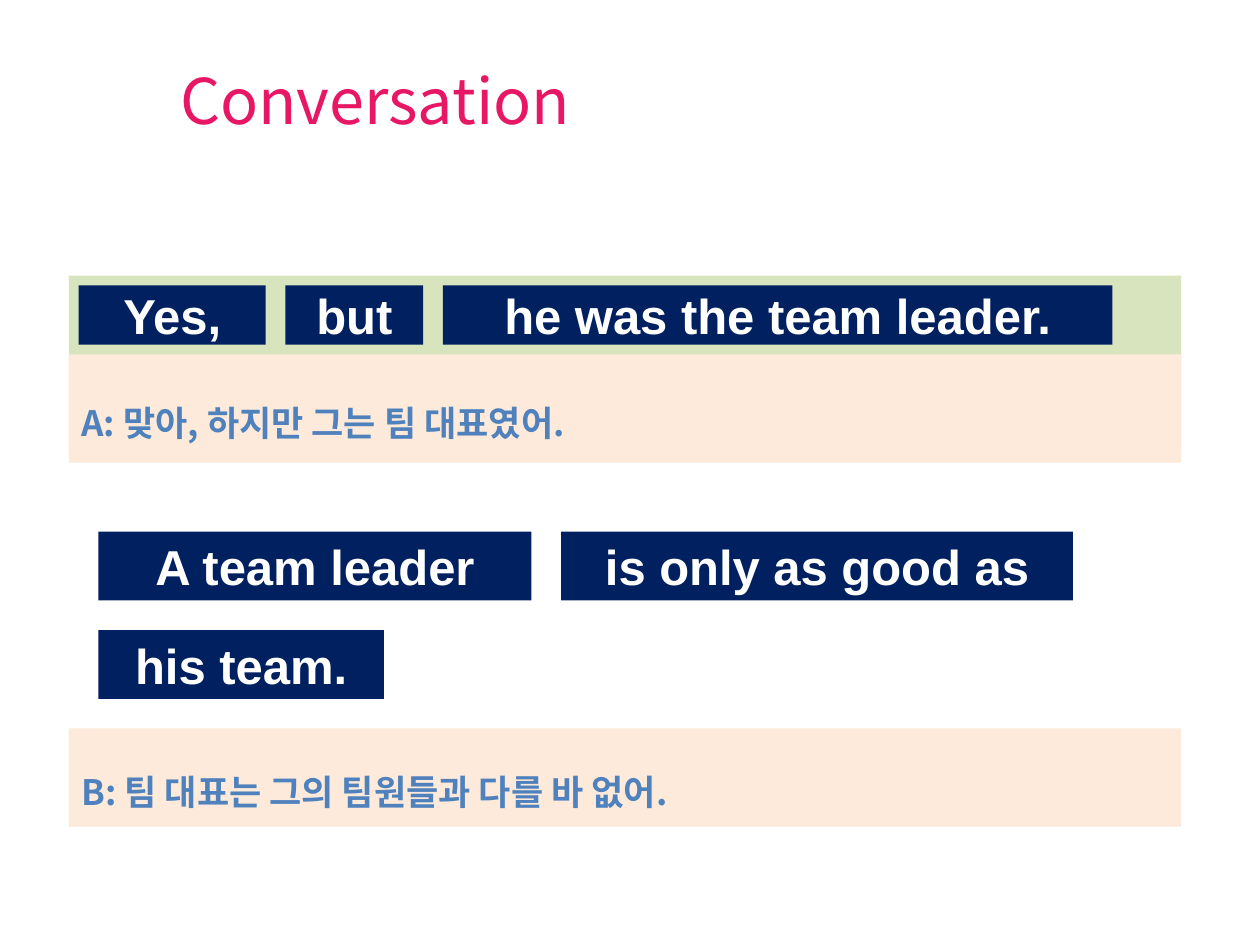
from pptx import Presentation
from pptx import util as u
from pptx.dml.color import RGBColor
from pptx.enum import shapes, text
from pptx.oxml.ns import qn
from lxml import etree

PINK = RGBColor(0xE8, 0x17, 0x66)
NAVY = RGBColor(0x00, 0x20, 0x60)
GREEN = RGBColor(0xD7, 0xE4, 0xBD)
PEACH = RGBColor(0xFD, 0xEA, 0xDA)
BLUE = RGBColor(0x4F, 0x81, 0xBD)
WHITE = RGBColor(0xFF, 0xFF, 0xFF)
LATIN = "Arial"
KOREAN = "Noto Sans CJK KR"
WIDE, HIGH = u.Inches(10), u.Inches(7.5)
COLS, ROWS = 128, 96
EDGE, SPAN = 7, 113


def grid(col, row, cols, rows):
    across, down = WIDE / COLS, HIGH / ROWS
    return [round(n) for n in (col * across, row * down, cols * across, rows * down)]


def write(para, words, size, font, ink, bold=True):
    run = para.add_run()
    run.text = words
    run.font.size = u.Pt(size)
    run.font.name = font
    run.font.bold = bold
    run.font.color.rgb = ink
    east = etree.Element(qn("a:ea"), typeface=font)
    run.font._element.find(qn("a:latin")).addnext(east)


def block(slide, place, fill):
    shape = slide.shapes.add_shape(shapes.MSO_SHAPE.RECTANGLE, *grid(*place))
    shape.shadow.inherit = False
    shape.fill.solid()
    shape.fill.fore_color.rgb = fill
    shape.line.fill.background()
    shape.text_frame.vertical_anchor = text.MSO_ANCHOR.MIDDLE
    return shape


def title(slide, words):
    box = slide.shapes.add_textbox(*grid(15.6, 5.6, 89.7, 12))
    box.text_frame.word_wrap = False
    write(box.text_frame.paragraphs[0], words, 36, KOREAN, PINK, False)


def band(slide, row, rows, words):
    shape = block(slide, (EDGE, row, SPAN, rows), PEACH)
    para = shape.text_frame.paragraphs[0]
    para.alignment = text.PP_ALIGN.LEFT
    para.line_spacing = u.Pt(40)
    write(para, words, 20, KOREAN, BLUE)


def chips(slide, col, row, rows, gap, items):
    for words, cols in items:
        shape = block(slide, (col, row, cols, rows), NAVY)
        para = shape.text_frame.paragraphs[0]
        para.alignment = text.PP_ALIGN.CENTER
        write(para, words, 28, LATIN, WHITE)
        col += cols + gap


def main():
    deck = Presentation()
    deck.slide_width, deck.slide_height = WIDE, HIGH
    slide = deck.slides.add_slide(deck.slide_layouts[6])
    title(slide, " Conversation")
    band(slide, 74, 10, "B: 팀 대표는 그의 팀원들과 다를 바 없어.")
    chips(slide, 10, 54, 7, 3, [("A team leader", 44), ("is only as good as", 52)])
    chips(slide, 10, 64, 7, 3, [("his team.", 29)])
    block(slide, (EDGE, 28, SPAN, 18), GREEN)
    band(slide, 36, 11, "A: 맞아, 하지만 그는 팀 대표였어.")
    chips(slide, 8, 29, 6, 2, [("Yes,", 19), ("but", 14), ("he was the team leader.", 68)])
    deck.save("out.pptx")


if __name__ == "__main__":
    main()
